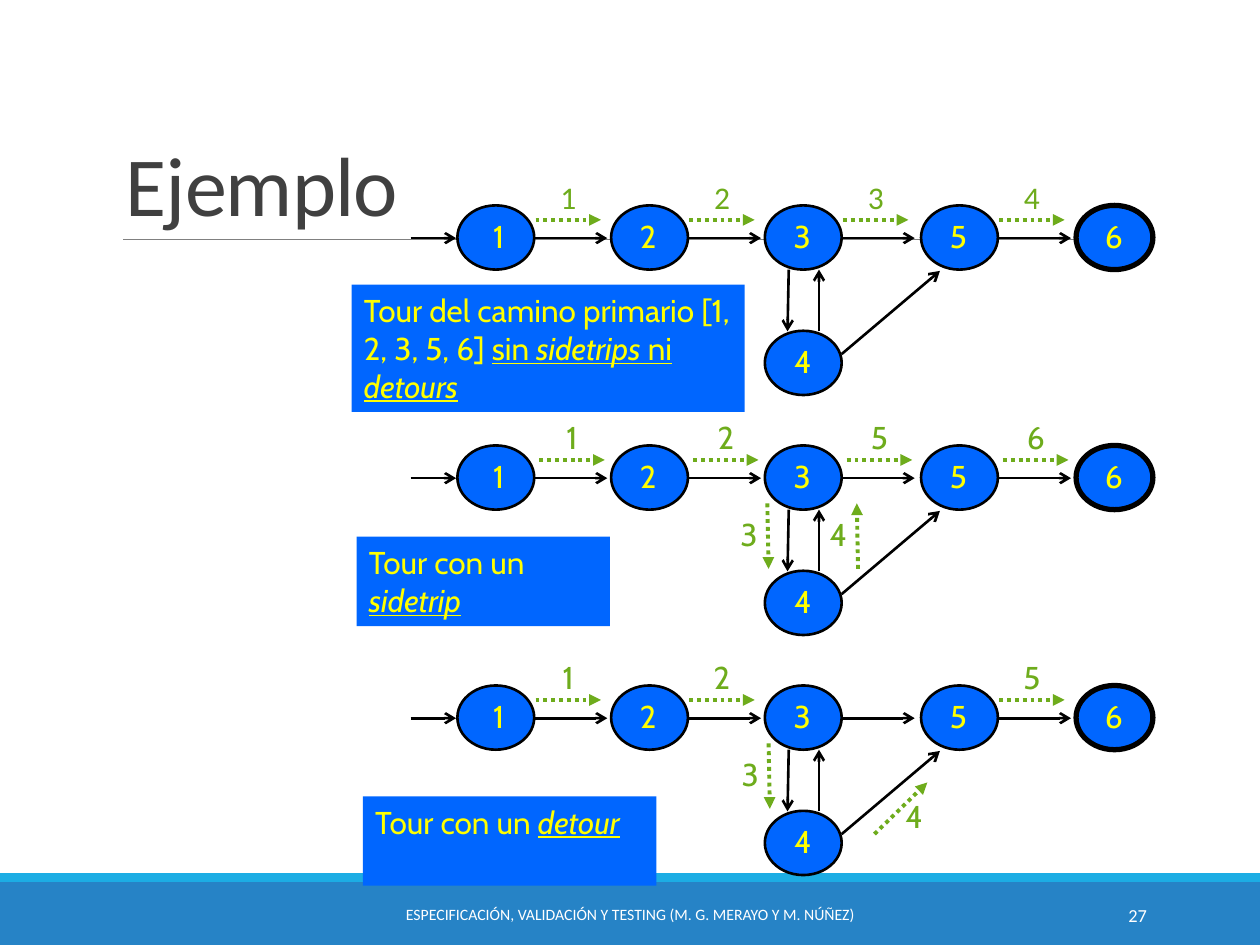
from dataclasses import dataclass
from typing import Any, NamedTuple

from lxml import etree
from pptx import Presentation
from pptx.dml.color import RGBColor
from pptx.enum.dml import MSO_LINE
from pptx.enum.shapes import MSO_CONNECTOR, MSO_SHAPE
from pptx.enum.text import MSO_ANCHOR, PP_ALIGN
from pptx.oxml.ns import qn
from pptx.util import Inches, Pt

LEFT, CENTER, RIGHT = PP_ALIGN.LEFT, PP_ALIGN.CENTER, PP_ALIGN.RIGHT
TOP, MIDDLE, BOTTOM = MSO_ANCHOR.TOP, MSO_ANCHOR.MIDDLE, MSO_ANCHOR.BOTTOM
OVAL, RECTANGLE = MSO_SHAPE.OVAL, MSO_SHAPE.RECTANGLE
STRAIGHT = MSO_CONNECTOR.STRAIGHT
DOTTED = MSO_LINE.ROUND_DOT

COLUMNS, ROWS = 100, 75
CELL = Inches(10) // COLUMNS
NODE_WIDTH, NODE_HEIGHT = 6.1, 5.1
MAIN_NODES = {"1": 36.3, "2": 48.5, "3": 60.7, "5": 73.1, "6": 85.4}
LOWER_DROP = 9.95
FIRST_ROW, ROW_PITCH = 16.3, 19.05


@dataclass(frozen=True)
class Theme:
    """Colours, fonts and type sizes of the slide."""
    blue: str = "0066FF"
    yellow: str = "FFFF00"
    green: str = "6EAC1C"
    black: str = "000000"
    white: str = "FFFFFF"
    gray: str = "808080"
    dark: str = "404040"
    footer: str = "2683C6"
    stripe: str = "1CADE4"
    body_font: str = "Cabin"
    base_font: str = "Calibri"
    title_size: float = 48
    body_size: float = 18
    footer_size: float = 9
    number_size: float = 10.5


THEME = Theme()


class Area(NamedTuple):
    """Rectangle in grid cells."""
    left: float
    top: float
    width: float
    height: float


class Style(NamedTuple):
    """Look of a text."""
    size: float = THEME.body_size
    color: str = THEME.yellow
    font: str = THEME.body_font
    align: Any = LEFT
    anchor: Any = TOP


class Span(NamedTuple):
    """Piece of text with its emphasis."""
    text: str
    underline: bool = False
    italic: bool = False


class Step(NamedTuple):
    """Dotted arrow with its number, relative to the row of its graph."""
    label: str
    start: tuple[float, float]
    end: tuple[float, float]
    label_at: tuple[float, float]


@dataclass(frozen=True)
class Tour:
    """One copy of the graph with its caption and numbered steps."""
    caption: Area
    spans: list[Span]
    across: dict[str, str]
    branches: list[Step]
    shift: float = 0
    font: str = THEME.body_font


TOURS = [
    Tour(Area(27.9, 22.6, 31.2, 10.1),
         [Span("Tour del camino primario [1, 2, 3, 5, 6] "), Span("sin ", True),
          Span("sidetrips", True, True), Span(" ni ", True), Span("detours", True, True)],
         {"1": "1", "2": "2", "3": "3", "5": "4"}, [], font=THEME.base_font),
    Tour(Area(28.3, 42.6, 20.1, 7.1),
         [Span("Tour con un "), Span("sidetrip", True, True)],
         {"1": "1", "2": "2", "3": "5", "5": "6"},
         [Step("3", (60.9, 4.6), (61, 9.8), (57.5, 5)),
          Step("4", (68.1, 9.8), (68, 4.6), (64.6, 5))], shift=0.3),
    Tour(Area(28.8, 63.2, 23.3, 7.1),
         [Span("Tour con un "), Span("detour", True, True)],
         {"1": "1", "2": "2", "5": "5"},
         [Step("3", (61, 4.6), (61.1, 9.8), (57.6, 5)),
          Step("4", (69.4, 11.8), (73.6, 7.7), (70.6, 8.4))]),
]


def cells(*lengths: float) -> list[int]:
    """Turn grid cells into slide lengths."""
    return [round(length * CELL) for length in lengths]


def write(box: Any, spans: list[Span], style: Style) -> None:
    """Fill a shape with one paragraph of spans."""
    frame = box.text_frame
    frame.word_wrap = True
    frame.vertical_anchor = style.anchor
    para = frame.paragraphs[0]
    para.alignment = style.align
    for span in spans:
        run = para.add_run()
        run.text = span.text
        font = run.font
        font.name, font.size = style.font, Pt(style.size)
        font.color.rgb = RGBColor.from_string(style.color)
        font.underline, font.italic = span.underline, span.italic


def add_text(shapes: Any, area: Area, text: str, style: Style) -> Any:
    """Add a text box and return it."""
    box = shapes.add_textbox(*cells(*area))
    write(box, [Span(text)], style)
    return box


def add_solid(shapes: Any, kind: Any, area: Area, fill: str, outline: float = 0) -> Any:
    """Add a filled shape, outlined in black when a width is given."""
    shape = shapes.add_shape(kind, *cells(*area))
    shape.shadow.inherit = False
    shape.fill.solid()
    shape.fill.fore_color.rgb = RGBColor.from_string(fill)
    if outline:
        shape.line.color.rgb = RGBColor.from_string(THEME.black)
        shape.line.width = Pt(outline)
    else:
        shape.line.fill.background()
    return shape


def add_line(shapes: Any, start: tuple[float, float], end: tuple[float, float],
             color: str = THEME.black, width: float = 1.5, head: str = "arrow",
             dash: Any = None) -> None:
    """Add a straight line, with an arrowhead at its end when one is named."""
    line = shapes.add_connector(STRAIGHT, *cells(*start, *end))
    line.line.color.rgb = RGBColor.from_string(color)
    line.line.width = Pt(width)
    line.line.dash_style = dash
    properties = line.element.spPr
    if head:
        etree.SubElement(properties.find(qn("a:ln")), qn("a:tailEnd"), type=head)
    etree.SubElement(properties, qn("a:effectLst"))


def add_node(shapes: Any, label: str, left: float, top: float) -> None:
    """Add a graph node with its number."""
    outline = 3 if label == "6" else 1.5
    add_solid(shapes, OVAL, Area(left, top, NODE_WIDTH, NODE_HEIGHT), THEME.blue, outline)
    align = RIGHT if label in ("1", "4") else LEFT
    add_text(shapes, Area(left + 1.3, top + 0.4, 3.4, 4), label, Style(align=align))


def add_graph(shapes: Any, row: float) -> None:
    """Add the six nodes and their edges."""
    middle = row + 2.6
    for label, left in MAIN_NODES.items():
        add_node(shapes, label, left, row)
        if label != "6":
            start = left + NODE_WIDTH
            add_line(shapes, (start, middle), (start + 5.8, middle))
    add_node(shapes, "4", MAIN_NODES["3"], row + LOWER_DROP)
    add_line(shapes, (32.6, middle), (36.2, middle))
    add_line(shapes, (62.6, row + NODE_HEIGHT), (62.5, row + 10))
    add_line(shapes, (65, row + 10), (65, row + NODE_HEIGHT))
    add_line(shapes, (66.8, row + 11.8), (74.6, row + 5.2))


def add_step(shapes: Any, step: Step, row: float, font: str) -> None:
    """Add a dotted arrow and its number in one group."""
    group = shapes.add_group_shape().shapes
    (x1, y1), (x2, y2), (left, top) = step.start, step.end, step.label_at
    add_line(group, (x1, row + y1), (x2, row + y2), THEME.green, 2.25, "triangle", DOTTED)
    add_text(group, Area(left, row + top, 3.9, 4.3), step.label,
             Style(color=THEME.green, font=font, align=CENTER))


def add_tour(shapes: Any, tour: Tour, row: float) -> None:
    """Add a graph, its caption and its steps."""
    add_graph(shapes.add_group_shape().shapes, row)
    write(add_solid(shapes, RECTANGLE, tour.caption, THEME.blue), tour.spans, Style())
    steps = list(tour.branches)
    for node, label in tour.across.items():
        x = MAIN_NODES[node] + NODE_WIDTH + tour.shift + 0.1
        steps.append(Step(label, (x, 1.15), (x + 5.2, 1.15), (x + 0.65, -2.65)))
    for step in steps:
        add_step(shapes, step, row, tour.font)


def main() -> None:
    """Build and save the slide."""
    deck = Presentation()
    deck.slide_width, deck.slide_height = cells(COLUMNS, ROWS)
    shapes = deck.slides.add_slide(deck.slide_layouts[6]).shapes
    add_solid(shapes, RECTANGLE, Area(0, 70, COLUMNS, 5), THEME.footer)
    add_solid(shapes, RECTANGLE, Area(0, 69.3, COLUMNS, 0.7), THEME.stripe)
    add_line(shapes, (9.8, 19), (91.5, 19), THEME.gray, 0.5, "")
    title = add_text(shapes, Area(9, 3.1, 82.5, 15.9), "Ejemplo",
                     Style(THEME.title_size, THEME.dark, THEME.base_font, anchor=BOTTOM))
    para = title.text_frame.paragraphs[0]
    para.line_spacing = 0.85
    para.runs[0].font._element.set("spc", "-50")
    for index, tour in enumerate(TOURS):
        add_tour(shapes, tour, FIRST_ROW + index * ROW_PITCH)
    add_text(shapes, Area(30.2, 70.6, 39.6, 4),
             "ESPECIFICACIÓN, VALIDACIÓN Y TESTING (M. G. MERAYO Y M. NÚÑEZ)",
             Style(THEME.footer_size, THEME.white, THEME.base_font, CENTER, MIDDLE))
    add_text(shapes, Area(81.2, 70.6, 10.8, 4), "27",
             Style(THEME.number_size, THEME.white, THEME.base_font, RIGHT, MIDDLE))
    deck.save("out.pptx")


if __name__ == "__main__":
    main()
